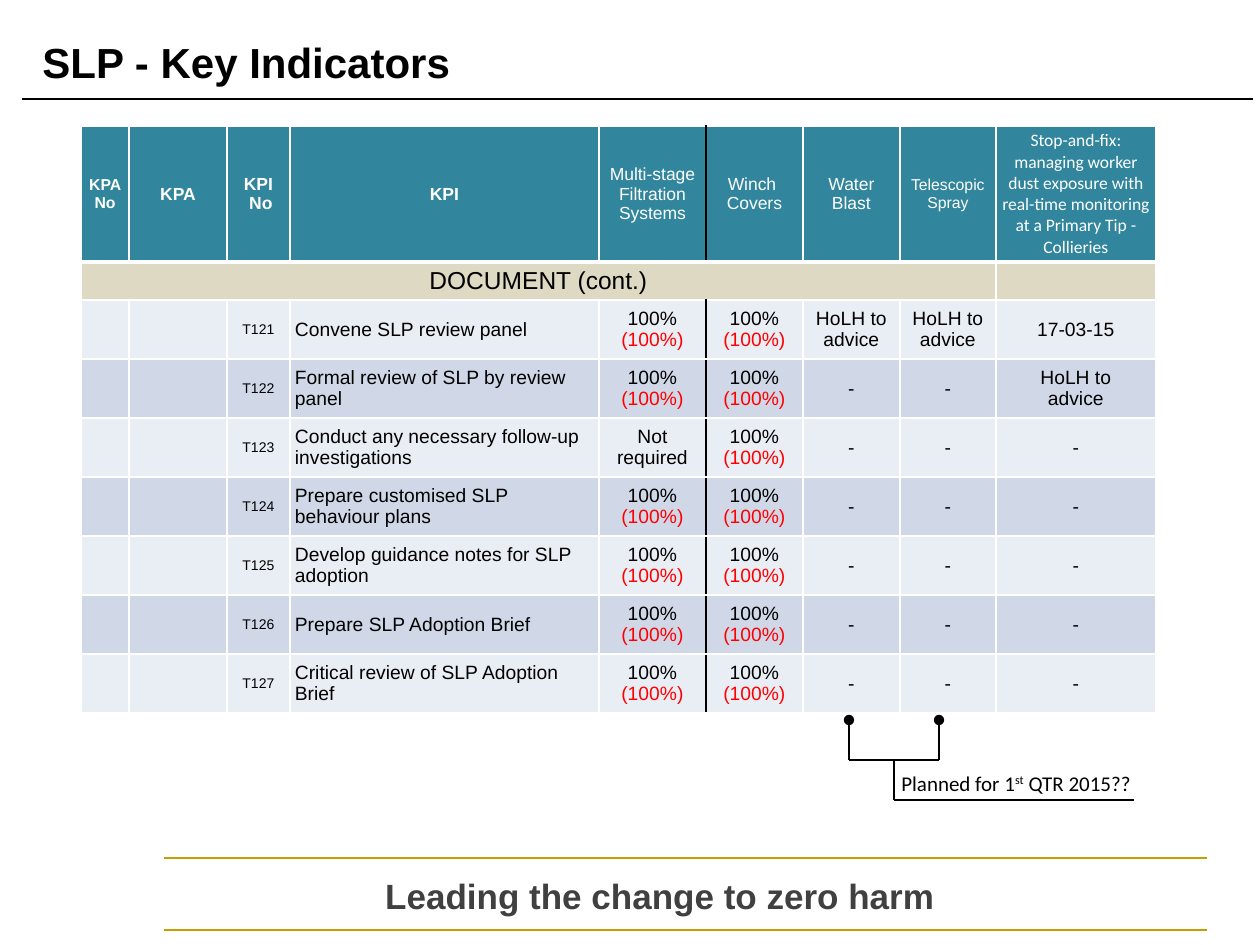
from dataclasses import dataclass

from lxml.etree import SubElement
from pptx import Presentation
from pptx.dml.color import RGBColor
from pptx.enum.shapes import MSO_CONNECTOR
from pptx.enum.text import MSO_ANCHOR, PP_ALIGN
from pptx.oxml.ns import qn
from pptx.util import Emu, Pt

PX = 914400 / 126
BLACK, WHITE, RED, GOLD = "000000", "FFFFFF", "FF0000", "C49F00"
HEADER_FILL, SECTION_FILL = "31859C", "DDD9C3"
BAND_FILLS = ("E9EDF4", "D0D8E8")


@dataclass
class Style:
    size: int
    color: str = BLACK
    bold: bool = False
    font: str = "Arial"
    align: PP_ALIGN = PP_ALIGN.CENTER


@dataclass
class Rule:
    start: tuple[int, int]
    end: tuple[int, int]
    color: str = BLACK
    width: float = 0.75
    dot: bool = False


@dataclass
class Indicator:
    number: str
    name: str
    results: tuple[str, ...]


DONE = "100%\n(100%)"
ADVICE = "HoLH to advice"
PENDING = (DONE, DONE, "-", "-", "-")
INDICATORS = [
    Indicator("T121", "Convene SLP review panel", (DONE, DONE, ADVICE, ADVICE, "17-03-15")),
    Indicator("T122", "Formal review of SLP by review panel",
              (DONE, DONE, "-", "-", "HoLH to\nadvice")),
    Indicator("T123", "Conduct any necessary follow-up investigations",
              ("Not required", DONE, "-", "-", "-")),
    Indicator("T124", "Prepare customised SLP behaviour plans", PENDING),
    Indicator("T125", "Develop guidance notes for SLP adoption", PENDING),
    Indicator("T126", "Prepare SLP Adoption Brief", PENDING),
    Indicator("T127", "Critical review of SLP Adoption Brief", PENDING),
]

HEADING = Style(10, WHITE, True)
PRACTICE = Style(10, WHITE)
HEADERS = [
    ("KPA No", Style(9, WHITE, True)),
    ("KPA", HEADING),
    ("KPI\n No", HEADING),
    ("KPI", HEADING),
    ("Multi-stage Filtration Systems", PRACTICE),
    ("Winch  Covers", PRACTICE),
    ("Water Blast", PRACTICE),
    ("Telescopic Spray", Style(9, WHITE)),
    ("Stop-and-fix: managing worker dust exposure with real-time monitoring "
     "at a Primary Tip - Collieries", Style(10, WHITE, font="Calibri")),
]
COLUMN_WIDTHS = (48, 98, 63, 309, 107, 97, 97, 96, 160)
ROW_HEIGHTS = (136, 38) + (59,) * len(INDICATORS)
DIVIDED_COLUMN = 4  # a black line runs down its right side

CODE, NAME, RESULT = Style(8), Style(11, align=PP_ALIGN.LEFT), Style(11)
SECTION = Style(14)

RULES = [
    Rule((22, 99), (1253, 99)),
    Rule((849, 720), (849, 760), dot=True),
    Rule((939, 720), (939, 760), dot=True),
    Rule((849, 760), (939, 760)),
    Rule((894, 760), (894, 800)),
    Rule((894, 800), (1134, 800)),
    Rule((164, 930), (1207, 930), GOLD, 1),
    Rule((164, 858), (1207, 858), GOLD, 1),
]


def px(length: int) -> Emu:
    return Emu(round(length * PX))


def rgb(color: str) -> RGBColor:
    return RGBColor.from_string(color)


def style_paragraph(paragraph, style: Style) -> None:
    paragraph.alignment = style.align
    font = paragraph.font
    font.name, font.size, font.bold = style.font, Pt(style.size), style.bold
    font.color.rgb = rgb(style.color)


def add_rule(slide, rule: Rule) -> None:
    connector = slide.shapes.add_connector(
        MSO_CONNECTOR.STRAIGHT, *map(px, rule.start + rule.end))
    connector.line.color.rgb = rgb(rule.color)
    connector.line.width = Pt(rule.width)
    if rule.dot:
        SubElement(connector.line._get_or_add_ln(), qn("a:headEnd"), type="oval")
    SubElement(connector._element.spPr, qn("a:effectLst"))


def add_text(slide, box: tuple[int, ...], text: str, style: Style, wrap: bool = True):
    frame = slide.shapes.add_textbox(*map(px, box)).text_frame
    frame.word_wrap = wrap
    paragraph = frame.paragraphs[0]
    style_paragraph(paragraph, style)
    paragraph.add_run().text = text
    return frame


def add_border(cell, side: str, color: str, width: float) -> None:
    line = SubElement(cell._tc.get_or_add_tcPr(), qn(f"a:ln{side}"), w=str(Pt(width)))
    SubElement(SubElement(line, qn("a:solidFill")), qn("a:srgbClr"), val=color)


def fill_cell(table, row: int, column: int, fill: str, text: str, style: Style) -> None:
    cell = table.cell(row, column)
    cell.margin_left = cell.margin_right = px(5)
    cell.margin_top = cell.margin_bottom = px(4)
    cell.vertical_anchor = MSO_ANCHOR.MIDDLE
    divided = row != 1
    add_border(cell, "L", BLACK if divided and column == DIVIDED_COLUMN + 1 else WHITE, 1)
    add_border(cell, "R", BLACK if divided and column == DIVIDED_COLUMN else WHITE, 1)
    add_border(cell, "T", WHITE, 3 if row == 1 else 1)
    add_border(cell, "B", WHITE, 3 if row == 0 else 1)
    cell.fill.solid()
    cell.fill.fore_color.rgb = rgb(fill)
    cell.text_frame.text = text
    for paragraph in cell.text_frame.paragraphs:
        style_paragraph(paragraph, style)
        if paragraph.text.startswith("("):
            paragraph.font.color.rgb = rgb(RED)
        if not text:
            # an empty cell takes its line height from the end mark
            SubElement(paragraph._p, qn("a:endParaRPr"), sz=str(style.size * 100))


def add_indicator_table(slide) -> None:
    table = slide.shapes.add_table(
        len(ROW_HEIGHTS), len(COLUMN_WIDTHS), px(81), px(126),
        px(sum(COLUMN_WIDTHS)), px(sum(ROW_HEIGHTS))).table
    table.first_row = table.horz_banding = False
    for column, width in zip(table.columns, COLUMN_WIDTHS):
        column.width = px(width)
    for row, height in zip(table.rows, ROW_HEIGHTS):
        row.height = px(height)

    section = [("DOCUMENT (cont.)", SECTION)] + [("", SECTION)] * (len(HEADERS) - 1)
    rows = [(HEADER_FILL, HEADERS), (SECTION_FILL, section)]
    for index, item in enumerate(INDICATORS):
        cells = [("", CODE), ("", CODE), (item.number, CODE), (item.name, NAME)]
        cells += [(result, RESULT) for result in item.results]
        rows.append((BAND_FILLS[index % 2], cells))
    for row, (fill, cells) in enumerate(rows):
        for column, (text, style) in enumerate(cells):
            fill_cell(table, row, column, fill, text, style)
    table.cell(1, 0).merge(table.cell(1, len(HEADERS) - 2))


def main() -> None:
    presentation = Presentation()
    presentation.slide_width, presentation.slide_height = px(1260), px(945)
    slide = presentation.slides.add_slide(presentation.slide_layouts[6])

    title = add_text(slide, (30, 22, 1240, 80), "SLP - Key Indicators",
                     Style(24, bold=True, align=PP_ALIGN.LEFT))
    title.vertical_anchor = MSO_ANCHOR.MIDDLE
    add_indicator_table(slide)
    for rule in RULES:
        add_rule(slide, rule)

    plan = add_text(slide, (887, 764, 258, 38), "Planned for 1",
                    Style(12, font="Calibri"), wrap=False).paragraphs[0]
    ordinal = plan.add_run()
    ordinal.text = "st"
    ordinal.font._element.set("baseline", "30000")
    plan.add_run().text = " QTR 2015??"

    add_text(slide, (207, 868, 906, 49), "Leading the change to zero harm",
             Style(20, "404040", True))
    presentation.save("out.pptx")


if __name__ == "__main__":
    main()
